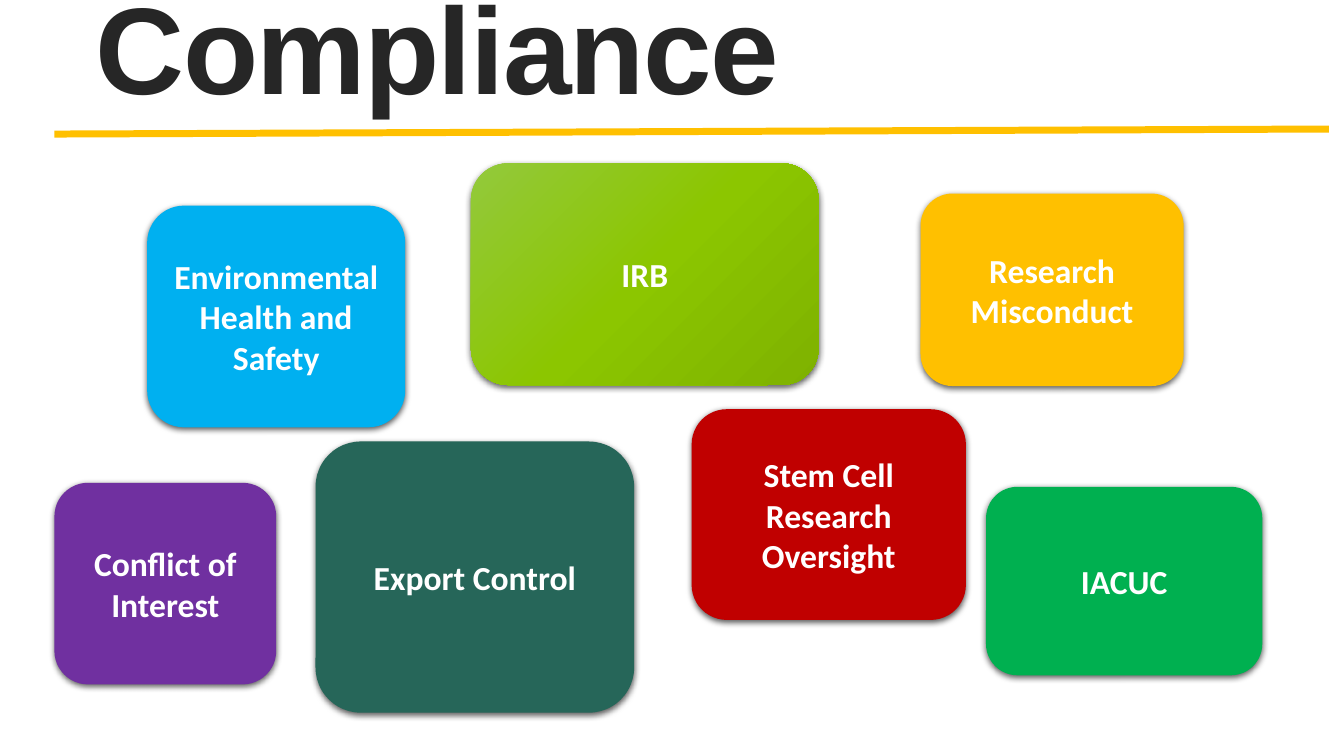
from copy import deepcopy
from dataclasses import dataclass
from typing import Any

from lxml.etree import SubElement
from pptx import Presentation
from pptx.dml.color import RGBColor
from pptx.enum.shapes import MSO_CONNECTOR, MSO_SHAPE
from pptx.enum.text import MSO_ANCHOR, MSO_AUTO_SIZE, PP_ALIGN
from pptx.oxml.ns import qn
from pptx.slide import Slide
from pptx.util import Emu, Pt

EMU_PER_PX = 9144

COLORS = {
    "ink": "262626",
    "white": "FFFFFF",
    "black": "000000",
    "purple": "7030A0",
    "blue": "00B0F0",
    "teal": "266659",
    "lime_light": "93C93C",
    "lime": "8CC600",
    "lime_dark": "7EB200",
    "green": "00B050",
    "red": "C00000",
    "amber": "FFC000",
}

TITLE_FONT = {"name": "Arial", "size": Pt(88), "bold": True}
AREA_FONT = {"name": "Calibri", "size": Pt(24), "bold": True}
TITLE_FRAME = {
    "word_wrap": True,
    "auto_size": MSO_AUTO_SIZE.NONE,
    "vertical_anchor": MSO_ANCHOR.BOTTOM,
}
AREA_FRAME = {"word_wrap": True, "vertical_anchor": MSO_ANCHOR.MIDDLE}
TITLE_PARAGRAPH = {"alignment": PP_ALIGN.LEFT, "line_spacing": 0.8}
AREA_PARAGRAPH = {"alignment": PP_ALIGN.CENTER}


@dataclass(frozen=True)
class Area:
    label: str
    left: int
    top: int
    width: int
    height: int
    colors: tuple[str, ...]


AREAS = (
    Area("Conflict of Interest", 54, 479, 220, 200, ("purple",)),
    Area("Environmental Health and Safety", 146, 204, 256, 220, ("blue",)),
    Area("Export Control", 313, 438, 316, 269, ("teal",)),
    Area("IRB", 467, 162, 345, 220, ("lime_light", "lime", "lime_dark")),
    Area("IACUC", 978, 483, 274, 187, ("green",)),
    Area("Stem Cell Research Oversight", 686, 406, 272, 209, ("red",)),
    Area("Research Misconduct", 913, 192, 261, 191, ("amber",)),
)


def px(length: int) -> Emu:
    return Emu(length * EMU_PER_PX)


def rgb(color: str) -> RGBColor:
    return RGBColor.from_string(COLORS[color])


def apply(target: Any, values: dict[str, Any]) -> None:
    for attribute, value in values.items():
        setattr(target, attribute, value)


def write(holder: Any, text: str, frame: dict, paragraph: dict, font: dict, color: str) -> Any:
    apply(holder.text_frame, frame)
    line = holder.text_frame.paragraphs[0]
    apply(line, paragraph)
    run = line.add_run()
    run.text = text
    apply(run.font, font)
    run.font.color.rgb = rgb(color)
    return run


def add_title(slide: Slide, text: str) -> None:
    heading = slide.shapes.title
    apply(heading, {"left": px(85), "top": px(-23), "width": px(1179), "height": px(145)})
    run = write(heading, text, TITLE_FRAME, TITLE_PARAGRAPH, TITLE_FONT, "ink")
    run.font._element.set("spc", "-120")


def paint(block: Any, colors: tuple[str, ...]) -> None:
    if len(colors) == 1:
        block.fill.solid()
        block.fill.fore_color.rgb = rgb(colors[0])
        return
    block.fill.gradient()
    block.fill.gradient_angle = 315
    stop_list = block._element.spPr.find(qn("a:gradFill")).find(qn("a:gsLst"))
    while len(stop_list) < len(colors):
        stop_list.append(deepcopy(stop_list[0]))
    for index, (stop, color) in enumerate(zip(block.fill.gradient_stops, colors)):
        stop.position = index / (len(colors) - 1)
        stop.color.rgb = rgb(color)


def cast_shadow(block: Any) -> None:
    block.shadow.inherit = False
    effects = block._element.spPr.find(qn("a:effectLst"))
    shadow = SubElement(
        effects,
        qn("a:outerShdw"),
        blurRad=str(Pt(4.5)),
        dist=str(Pt(1.5)),
        dir="5400000",
        algn="ctr",
        rotWithShape="0",
    )
    tint = SubElement(shadow, qn("a:srgbClr"), val=COLORS["black"])
    SubElement(tint, qn("a:alpha"), val="63000")


def add_area(slide: Slide, area: Area) -> None:
    bounds = map(px, (area.left, area.top, area.width, area.height))
    block = slide.shapes.add_shape(MSO_SHAPE.ROUNDED_RECTANGLE, *bounds)
    paint(block, area.colors)
    block.line.fill.background()
    cast_shadow(block)
    write(block, area.label, AREA_FRAME, AREA_PARAGRAPH, AREA_FONT, "white")


def add_rule(slide: Slide) -> None:
    ends = map(px, (54, 133, 1318, 128))
    rule = slide.shapes.add_connector(MSO_CONNECTOR.STRAIGHT, *ends)
    rule.line.color.rgb = rgb("amber")
    rule.line.width = Pt(5)
    SubElement(rule._element.spPr, qn("a:effectLst"))


def main() -> None:
    deck = Presentation()
    apply(deck, {"slide_width": px(1333), "slide_height": px(750)})
    slide = deck.slides.add_slide(deck.slide_layouts[5])
    slide.background.fill.solid()
    slide.background.fill.fore_color.rgb = rgb("white")
    add_title(slide, "Compliance")
    for area in AREAS:
        add_area(slide, area)
    add_rule(slide)
    deck.save("out.pptx")


if __name__ == "__main__":
    main()
